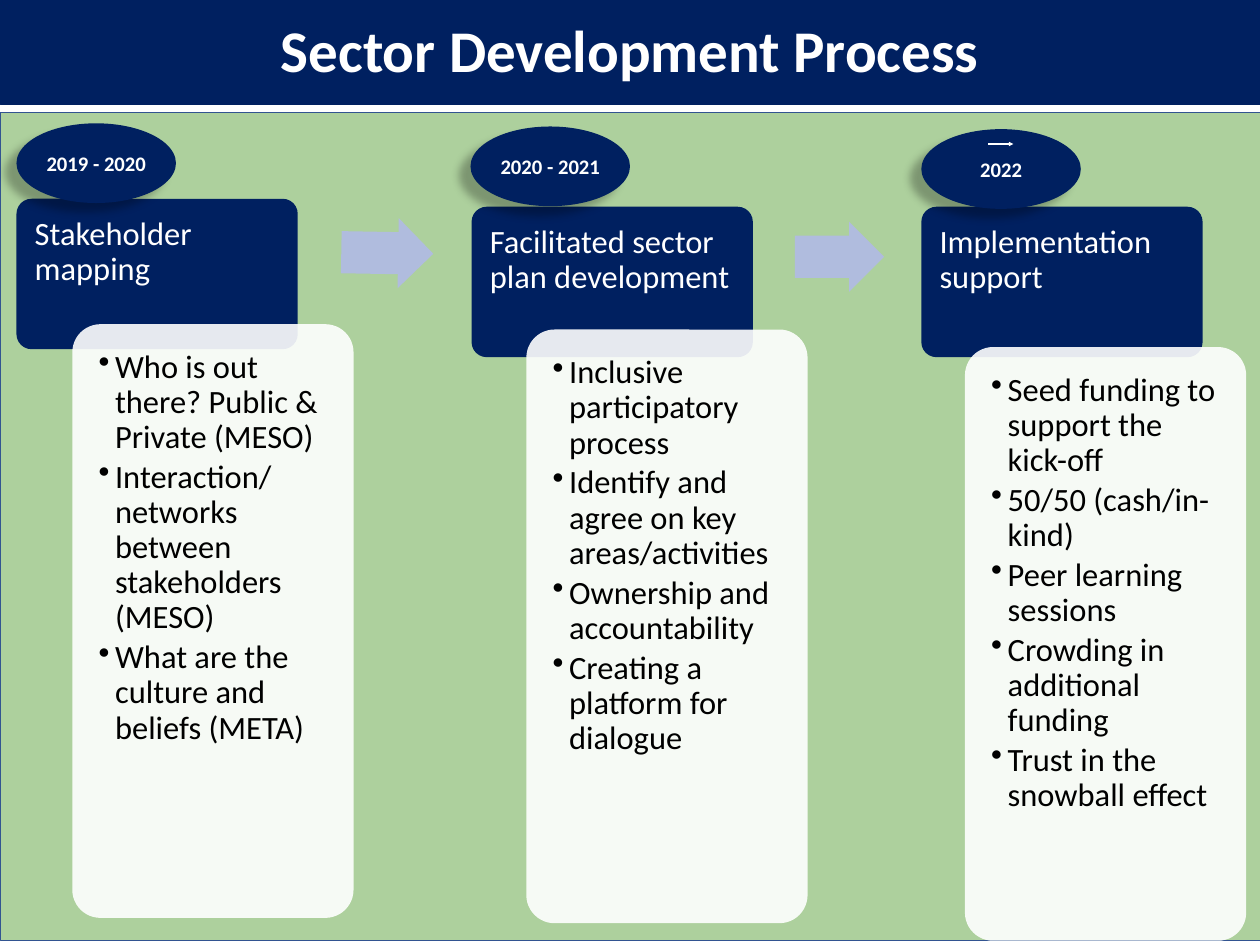
from dataclasses import dataclass

from lxml import etree
from pptx import Presentation
from pptx.dml.color import RGBColor
from pptx.enum.shapes import MSO_CONNECTOR, MSO_SHAPE
from pptx.enum.text import MSO_ANCHOR, PP_ALIGN
from pptx.oxml import parse_xml
from pptx.oxml.ns import nsdecls, qn
from pptx.util import Inches, Pt

RECTANGLE = MSO_SHAPE.RECTANGLE
ROUNDED = MSO_SHAPE.ROUNDED_RECTANGLE
ELLIPSE = MSO_SHAPE.OVAL
ARROW = MSO_SHAPE.RIGHT_ARROW
STRAIGHT = MSO_CONNECTOR.STRAIGHT
TOP, MIDDLE = MSO_ANCHOR.TOP, MSO_ANCHOR.MIDDLE
LEFT, CENTER = PP_ALIGN.LEFT, PP_ALIGN.CENTER


@dataclass(frozen=True)
class Theme:
    navy: str = "002060"
    green: str = "ADD09D"
    outline: str = "325491"
    arrow: str = "B0BCDE"
    white: str = "FFFFFF"
    black: str = "000000"
    font: str = "Calibri"
    title_size: int = 80
    body_size: int = 44
    badge_size: int = 28


THEME = Theme()
SLIDE_WIDTH, SLIDE_HEIGHT = 23.7, 17.78
CARD_WIDTH, HEADER_HEIGHT, PANEL_HEIGHT = 5.29, 2.83, 11.17
BADGE_WIDTH, BADGE_HEIGHT = 3, 1.5

STAGES = [
    {
        "period": "2019 - 2020",
        "heading": "Stakeholder mapping",
        "points": [
            "Who is out there? Public & Private (MESO)",
            "Interaction/\vnetworks between stakeholders (MESO)",
            "What are the culture and beliefs (META)",
        ],
        "badge": (0.31, 2.32),
        "header": (0.31, 3.74),
        "panel": (1.36, 6.1),
    },
    {
        "period": "2020 - 2021",
        "heading": "Facilitated sector plan development",
        "points": [
            "Inclusive participatory process",
            "Identify and agree on key areas/activities",
            "Ownership and accountability",
            "Creating a platform for dialogue",
        ],
        "badge": (8.85, 2.38),
        "header": (8.87, 3.89),
        "panel": (9.9, 6.2),
    },
    {
        "period": "2022",
        "heading": "Implementation support",
        "points": [
            "Seed funding to support the kick-off",
            "50/50 (cash/in-kind)",
            "Peer learning sessions",
            "Crowding in additional funding",
            "Trust in the snowball effect",
        ],
        "badge": (17.33, 2.43),
        "header": (17.33, 3.89),
        "panel": (18.15, 6.53),
    },
]


def add_block(slide, kind, box, fill, line=None):
    shape = slide.shapes.add_shape(kind, *map(Inches, box))
    shape.shadow.inherit = False
    shape.fill.solid()
    shape.fill.fore_color.rgb = RGBColor.from_string(fill)
    if line:
        shape.line.color.rgb = RGBColor.from_string(line)
        shape.line.width = Pt(1)
    else:
        shape.line.fill.background()
    return shape


def add_bullet(paragraph):
    properties = paragraph._p.get_or_add_pPr()
    properties.set("marL", str(Inches(0.31)))
    properties.set("indent", str(-Inches(0.31)))
    etree.SubElement(properties, qn("a:buChar")).set("char", "•")


def write(shape, lines, size, color, margins=(0, 0, 0, 0), anchor=MIDDLE,
          align=CENTER, bold=False, spacing=1.0, gap=0, bullets=False):
    frame = shape.text_frame
    left, top, right, bottom = map(Inches, margins)
    frame_format = {
        "word_wrap": True, "vertical_anchor": anchor, "margin_left": left,
        "margin_top": top, "margin_right": right, "margin_bottom": bottom,
    }
    for name, value in frame_format.items():
        setattr(frame, name, value)
    font_format = {"name": THEME.font, "size": Pt(size), "bold": bold}
    for index, line in enumerate(lines):
        paragraph = frame.add_paragraph() if index else frame.paragraphs[0]
        paragraph.text = line
        if bullets:
            add_bullet(paragraph)
        paragraph.alignment = align
        paragraph.line_spacing = spacing
        paragraph.space_after = Pt(gap)
        for run in paragraph.runs:
            for name, value in font_format.items():
                setattr(run.font, name, value)
            run.font.color.rgb = RGBColor.from_string(color)


def add_badge_shadow(shape):
    properties = shape._element.spPr
    properties.remove(properties.find(qn("a:effectLst")))
    properties.append(parse_xml(
        f'<a:effectLst {nsdecls("a")}><a:outerShdw blurRad="{Pt(11.8)}" '
        f'dist="{Pt(19.7)}" dir="8460000" algn="ctr">'
        f'<a:srgbClr val="{THEME.black}"><a:alpha val="28000"/></a:srgbClr>'
        '</a:outerShdw></a:effectLst>'))


def add_title(slide, box):
    banner = add_block(slide, RECTANGLE, box, THEME.navy, THEME.navy)
    write(banner, ["Sector Development Process"], THEME.title_size, THEME.white, bold=True)


def add_header(slide, box, heading):
    header = add_block(slide, ROUNDED, box, THEME.navy)
    header.adjustments[0] = 0.1
    write(header, [heading], THEME.body_size, THEME.white, (0.26, 0.26, 0.26, 0.1),
          TOP, LEFT, spacing=0.9)


def add_panel(slide, box, points):
    panel = add_block(slide, ROUNDED, box, THEME.white)
    panel.adjustments[0] = 0.1
    color = panel._element.spPr.find(qn("a:solidFill"))[0]
    etree.SubElement(color, qn("a:alpha")).set("val", "90000")
    write(panel, points, THEME.body_size, THEME.black, (0.34,) * 4,
          TOP, LEFT, spacing=0.9, gap=6.6, bullets=True)


def add_badge(slide, box, period):
    badge = add_block(slide, ELLIPSE, box, THEME.navy)
    add_badge_shadow(badge)
    write(badge, [period], THEME.badge_size, THEME.white, bold=True)


def add_stage(slide, stage):
    add_header(slide, (*stage["header"], CARD_WIDTH, HEADER_HEIGHT), stage["heading"])
    add_panel(slide, (*stage["panel"], CARD_WIDTH, PANEL_HEIGHT), stage["points"])
    add_badge(slide, (*stage["badge"], BADGE_WIDTH, BADGE_HEIGHT), stage["period"])


def add_step_arrow(slide, box, rotation):
    arrow = add_block(slide, ARROW, box, THEME.arrow)
    arrow.adjustments[0] = 0.6
    arrow.adjustments[1] = 0.5
    arrow.rotation = rotation


def add_onward_arrow(slide, badge_position):
    left, top = badge_position
    start, level = left + 1.26, top + 0.28
    connector = slide.shapes.add_connector(
        STRAIGHT, *map(Inches, (start, level, start + 0.47, level)))
    connector.line.color.rgb = RGBColor.from_string(THEME.white)
    connector.line.width = Pt(1.5)
    etree.SubElement(connector.line._get_or_add_ln(), qn("a:tailEnd")).set("type", "triangle")
    etree.SubElement(connector._element.spPr, qn("a:effectLst"))


def main():
    presentation = Presentation()
    presentation.slide_width = Inches(SLIDE_WIDTH)
    presentation.slide_height = Inches(SLIDE_HEIGHT)
    slide = presentation.slides.add_slide(presentation.slide_layouts[6])
    add_block(slide, RECTANGLE, (0, 2.12, SLIDE_WIDTH, 15.58), THEME.green, THEME.outline)
    for stage in STAGES:
        add_stage(slide, stage)
    add_step_arrow(slide, (6.42, 4.1, 1.73, 1.32), 1)
    add_step_arrow(slide, (14.95, 4.17, 1.68, 1.32), 0)
    add_onward_arrow(slide, STAGES[-1]["badge"])
    add_title(slide, (0, -0.15, SLIDE_WIDTH, 2.12))
    presentation.save("out.pptx")


if __name__ == "__main__":
    main()
